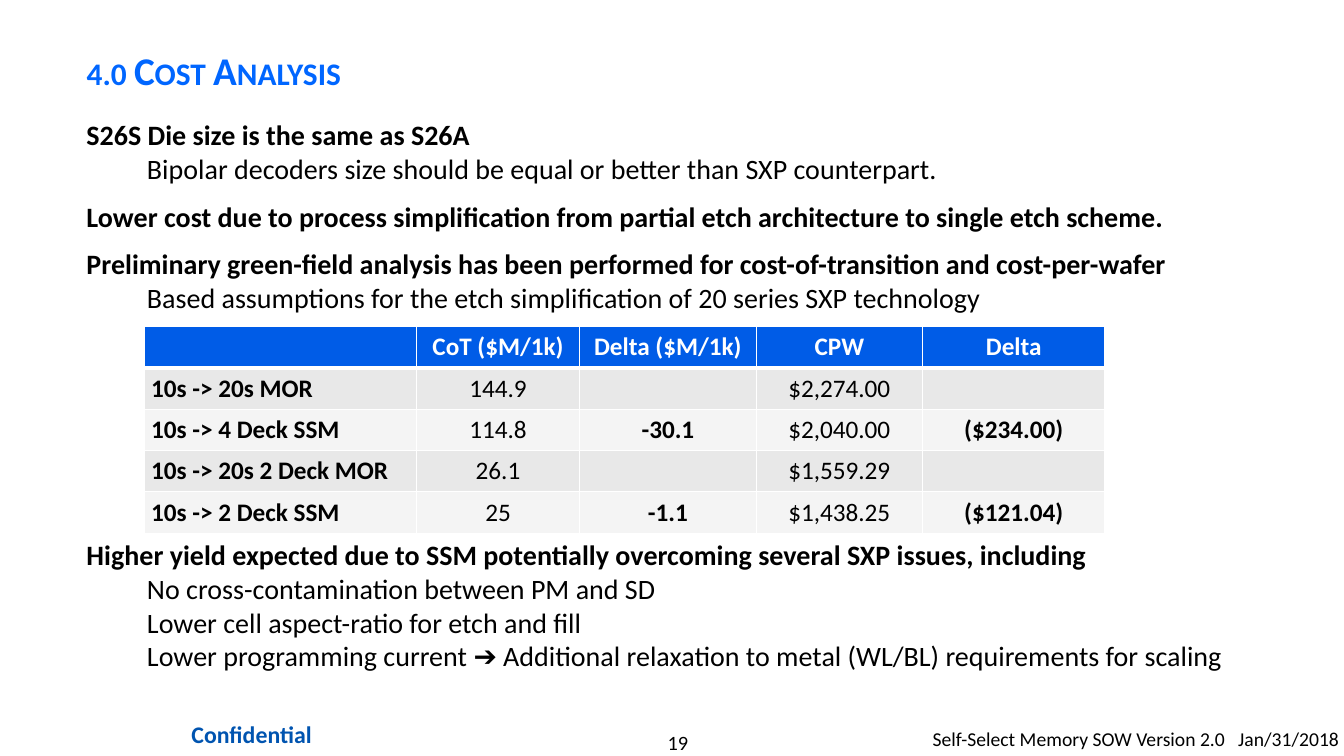
from lxml.etree import SubElement
from pptx import Presentation
from pptx.dml.color import RGBColor
from pptx.enum.text import MSO_ANCHOR as Anchor, MSO_AUTO_SIZE as AutoSize, PP_ALIGN as Align
from pptx.oxml.ns import qn
from pptx.util import Inches, Pt

FONT = "Calibri"
BLACK = RGBColor(0x00, 0x00, 0x00)
WHITE = RGBColor(0xFF, 0xFF, 0xFF)
TITLE_BLUE = RGBColor(0x00, 0x66, 0xFF)
HEADER_BLUE = RGBColor(0x00, 0x5C, 0xE7)
FOOTER_BLUE = RGBColor(0x00, 0x54, 0xB0)
BANDS = [RGBColor(0xF4, 0xF4, 0xF4), RGBColor(0xE8, 0xE8, 0xE8)]

# (level, space before in points, text); the large space leaves room for the table
POINTS = [
    (0, 0, "S26S Die size is the same as S26A"),
    (1, 0, "Bipolar decoders size should be equal or better than SXP counterpart."),
    (0, 10, "Lower cost due to process simplification from partial etch architecture "
            "to single etch scheme."),
    (0, 10, "Preliminary green-field analysis has been performed for "
            "cost-of-transition and cost-per-wafer"),
    (1, 0, "Based assumptions for the etch simplification of 20 series SXP technology"),
    (0, 160, "Higher yield expected due to SSM potentially overcoming several "
             "SXP issues, including"),
    (1, 0, "No cross-contamination between PM and SD"),
    (1, 0, "Lower cell aspect-ratio for etch and fill"),
    (1, 0, "Lower programming current ➔ Additional relaxation to metal (WL/BL) "
           "requirements for scaling"),
]
INDENTS = [(0.5, -0.5), (1.21, -0.61)]  # left margin and first-line indent by level

COSTS = [
    ["", "CoT ($M/1k)", "Delta ($M/1k)", "CPW", "Delta"],
    ["10s -> 20s MOR", "144.9", "", "$2,274.00", ""],
    ["10s -> 4 Deck SSM", "114.8", "-30.1", "$2,040.00", "($234.00)"],
    ["10s -> 20s 2 Deck MOR", "26.1", "", "$1,559.29", ""],
    ["10s -> 2 Deck SSM", "25", "-1.1", "$1,438.25", "($121.04)"],
]
COLUMN_WIDTHS = [2.7, 1.62, 1.75, 1.65, 1.81]
BOLD_COLUMNS = {0, 2, 4}
ROW_HEIGHT = 0.41


def set_font(font, size, color=BLACK, bold=False):
    font.name = FONT
    font.size = Pt(size)
    font.bold = bold
    font.color.rgb = color


def set_margins(target, side, end):
    target.margin_left = target.margin_right = Inches(side)
    target.margin_top = target.margin_bottom = Inches(end)


def add_box(page, left, top, width, height, side=0.1, end=0.05):
    box = page.shapes.add_textbox(Inches(left), Inches(top), Inches(width), Inches(height))
    frame = box.text_frame
    frame.word_wrap = True
    set_margins(frame, side, end)
    return frame


def set_title(page, text):
    title = page.shapes.title
    title.left, title.top = Inches(0.76), Inches(0.21)
    title.width, title.height = Inches(11.06), Inches(0.92)
    frame = title.text_frame
    frame.auto_size = AutoSize.NONE
    frame.vertical_anchor = Anchor.MIDDLE
    set_margins(frame, 0.1, 0.05)
    para = frame.paragraphs[0]
    para.alignment = Align.LEFT
    para.line_spacing = 1.1
    span = para.add_run()
    span.text = text
    set_font(span.font, 28, TITLE_BLUE, True)
    span._r.get_or_add_rPr().set("cap", "small")


def add_points(page):
    frame = add_box(page, 0.76, 1.12, 12.36, 5.86)
    for index, (level, space, text) in enumerate(POINTS):
        para = frame.add_paragraph() if index else frame.paragraphs[0]
        para.text = text
        para.level = level
        if space:
            para.space_before = Pt(space)
        margin, indent = INDENTS[level]
        properties = para._p.get_or_add_pPr()
        properties.set("marL", str(Inches(margin)))
        properties.set("indent", str(Inches(indent)))
        set_font(para.font, 20, bold=level == 0)


def add_borders(cell, bottom):
    # Border lines come before the fill in the cell properties
    properties = cell._tc.get_or_add_tcPr()
    widths = {"a:lnL": 1, "a:lnR": 1, "a:lnT": 1, "a:lnB": bottom}
    for place, (tag, width) in enumerate(widths.items()):
        line = SubElement(properties, qn(tag), w=str(Pt(width)))
        fill = SubElement(line, qn("a:solidFill"))
        SubElement(fill, qn("a:srgbClr"), val=str(WHITE))
        properties.insert(place, line)


def add_cost_table(page):
    rows, columns = len(COSTS), len(COLUMN_WIDTHS)
    table = page.shapes.add_table(
        rows, columns, Inches(1.43), Inches(3.24),
        Inches(sum(COLUMN_WIDTHS)), Inches(ROW_HEIGHT * rows)).table
    for column, width in zip(table.columns, COLUMN_WIDTHS):
        column.width = Inches(width)
    for r, values in enumerate(COSTS):
        table.rows[r].height = Inches(ROW_HEIGHT)
        header = r == 0
        for c, value in enumerate(values):
            cell = table.cell(r, c)
            cell.fill.solid()
            cell.fill.fore_color.rgb = HEADER_BLUE if header else BANDS[r % 2]
            add_borders(cell, 3 if header else 1)
            set_margins(cell, 0.07, 0)
            cell.vertical_anchor = Anchor.MIDDLE
            cell.text = value
            para = cell.text_frame.paragraphs[0]
            para.alignment = Align.CENTER if c else Align.LEFT
            set_font(para.font, 18, WHITE if header else BLACK,
                     header or c in BOLD_COLUMNS)


def add_footer(page, frame, text, size, color=BLACK, bold=False, align=Align.CENTER, tab=None):
    para = frame.paragraphs[0]
    para.text = text
    para.alignment = align
    if tab:
        tabs = SubElement(para._p.get_or_add_pPr(), qn("a:tabLst"))
        SubElement(tabs, qn("a:tab"), pos=str(Inches(tab)), algn="l")
    set_font(para.font, size, color, bold)


def main():
    deck = Presentation()
    deck.slide_width, deck.slide_height = Inches(13.33), Inches(7.5)
    page = deck.slides.add_slide(deck.slide_layouts[5])

    # Footer
    add_footer(page, add_box(page, 5.56, 7.24, 2.33, 0.24, 0, 0), "19", 14.5)
    add_footer(page, add_box(page, 1.55, 7.08, 1.89, 0.41, 0.12, 0.06),
               "Confidential", 17, FOOTER_BLUE, True)
    add_footer(page, add_box(page, 9.25, 7.16, 4.08, 0.34, 0),
               "Self-Select Memory SOW Version 2.0\tJan/31/2018", 14,
               align=Align.LEFT, tab=3.03)

    # Title, points and cost table
    set_title(page, "4.0 Cost Analysis")
    add_points(page)
    add_cost_table(page)

    deck.save("out.pptx")


if __name__ == "__main__":
    main()
